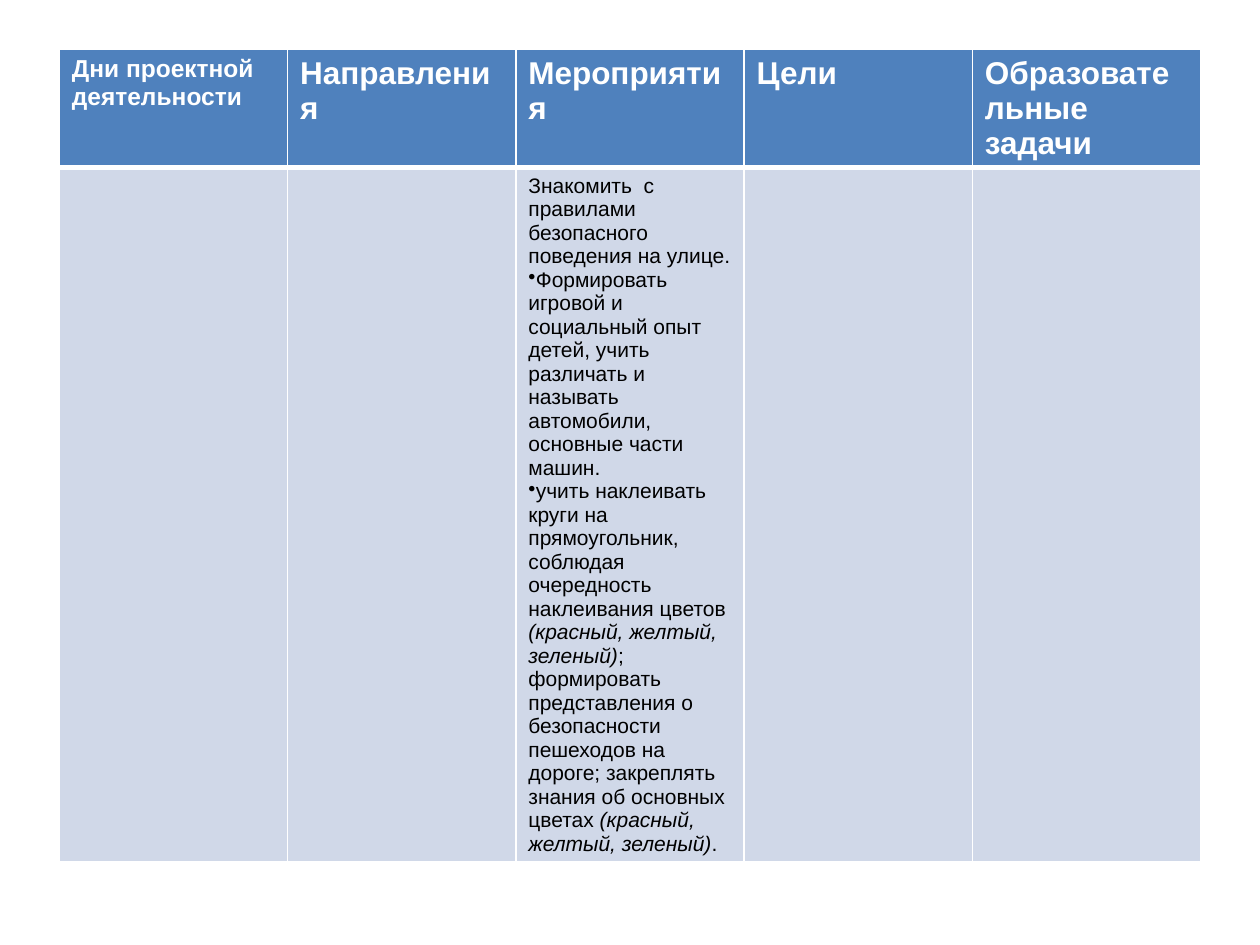
from lxml.etree import SubElement
from pptx import Presentation
from pptx.dml.color import RGBColor
from pptx.oxml.ns import qn
from pptx.util import Inches, Pt

WHITE = RGBColor(0xFF, 0xFF, 0xFF)
BLACK = RGBColor(0x00, 0x00, 0x00)
BLUE = RGBColor(0x4F, 0x81, 0xBD)
PALE = RGBColor(0xD0, 0xD8, 0xE8)

WIDTH, HEIGHT = Inches(10), Inches(7.5)
FONT = "Arial"
HEADERS = [
    ("Дни проектной деятельности", 14),
    ("Направления", 18),
    ("Мероприятия", 18),
    ("Цели", 18),
    ("Образовательные задачи", 18),
]
ACTIVITY_COLUMN = 2
COLOURS = "(красный, желтый, зеленый)"
ACTIVITIES = [
    (False, ["Знакомить  с правилами безопасного поведения на улице."]),
    (True, ["Формировать игровой и социальный опыт детей, учить различать "
            "и называть автомобили, основные части машин."]),
    (True, ["учить наклеивать круги на прямоугольник, соблюдая очередность "
            "наклеивания цветов ", COLOURS,
            "; формировать представления о безопасности пешеходов на дороге; "
            "закреплять знания об основных цветах ", COLOURS, "."]),
]


def set_borders(cell, bottom):
    tcPr = cell._tc.get_or_add_tcPr()
    for side, width in (("L", 1), ("R", 1), ("T", 1), ("B", bottom)):
        ln = SubElement(tcPr, qn(f"a:ln{side}"), w=str(Pt(width)))
        fill = SubElement(ln, qn("a:solidFill"))
        SubElement(fill, qn("a:srgbClr"), val=str(WHITE))


def style_cell(cell, color, bottom):
    set_borders(cell, bottom)
    cell.fill.solid()
    cell.fill.fore_color.rgb = color


def style_run(r, size, color, bold=False, italic=False):
    r.font.name = FONT
    r.font.size = Pt(size)
    r.font.bold = bold
    r.font.italic = italic
    r.font.color.rgb = color


def fill_header(cell, text, size):
    cell.text_frame.text = text
    style_run(cell.text_frame.paragraphs[0].runs[0], size, WHITE, bold=True)


def fill_activities(cell):
    tf = cell.text_frame
    for i, (bulleted, parts) in enumerate(ACTIVITIES):
        p = tf.add_paragraph() if i else tf.paragraphs[0]
        if bulleted:
            SubElement(p._p.get_or_add_pPr(), qn("a:buChar"), char="•")
        for part in parts:
            r = p.add_run()
            r.text = part
            style_run(r, 12, BLACK, italic=part == COLOURS)


def add_plan_table(s):
    left, top = round(WIDTH * 0.047), round(HEIGHT * 0.052)
    table = s.shapes.add_table(2, len(HEADERS), left, top,
                               WIDTH - 2 * left, Inches(6.4)).table
    table.rows[0].height = Inches(0.92)
    table.rows[1].height = Inches(5.48)
    for col, (text, size) in enumerate(HEADERS):
        style_cell(table.cell(0, col), BLUE, 3)
        style_cell(table.cell(1, col), PALE, 1)
        fill_header(table.cell(0, col), text, size)
    fill_activities(table.cell(1, ACTIVITY_COLUMN))


def main():
    prs = Presentation()
    prs.slide_width, prs.slide_height = WIDTH, HEIGHT
    s = prs.slides.add_slide(prs.slide_layouts[6])
    add_plan_table(s)
    prs.save("out.pptx")


if __name__ == "__main__":
    main()
